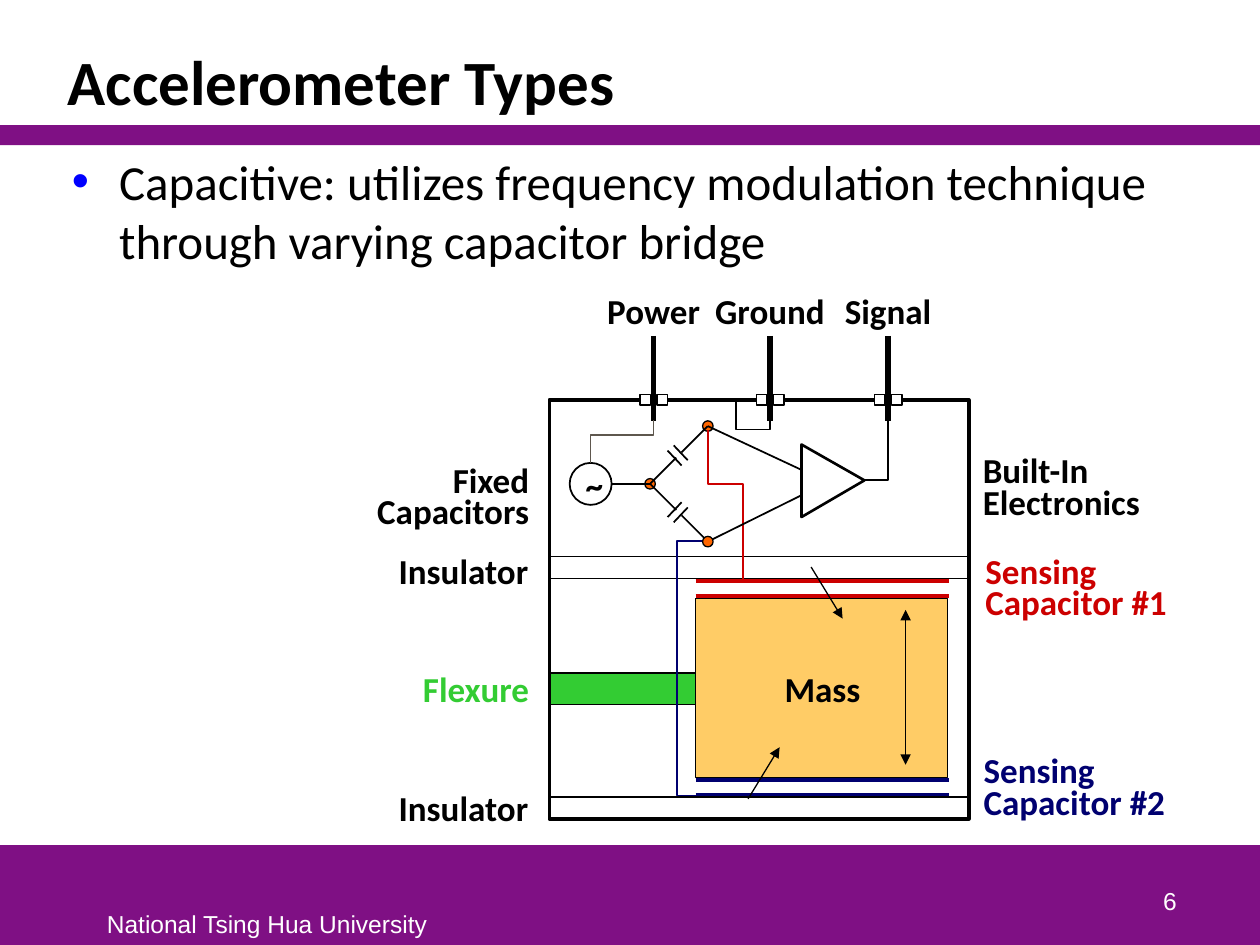
from lxml.etree import SubElement
from pptx import Presentation
from pptx.dml.color import RGBColor
from pptx.enum.shapes import MSO_CONNECTOR, MSO_SHAPE
from pptx.enum.text import MSO_ANCHOR, MSO_AUTO_SIZE, PP_ALIGN
from pptx.oxml.ns import qn
from pptx.util import Pt

BLACK, WHITE, PURPLE = "000000", "FFFFFF", "7F1084"
RED, NAVY, GREEN, ORANGE, SAND = "CC0000", "000070", "33CC33", "FF6600", "FFCC66"

TITLE = "Accelerometer Types"
BULLET = "Capacitive: utilizes frequency modulation technique through varying capacitor bridge"
FOOTER = "National Tsing Hua University"
PAGE_NUMBER = "6"

# Terminal name, x of its lead
TERMINALS = [("Power", 373.5), ("Ground", 440), ("Signal", 507.5)]
LEAD_TOP, LEAD_BOTTOM = 192, 240.5

# Side labels: text, (left, top, width, height), colour
LEFT_LABELS = [
    ("Fixed Capacitors", (178, 264, 131.5, 44.5), BLACK),
    ("Insulator", (177, 316, 132, 25), BLACK),
    ("Flexure", (196, 383.5, 113.5, 25), GREEN),
    ("Insulator", (177, 451.5, 132, 25), BLACK),
]
RIGHT_LABELS = [
    ("Built-In Electronics", (554.5, 258.5, 144, 44), BLACK),
    ("Sensing Capacitor #1", (556, 316, 144, 44.5), RED),
    ("Sensing Capacitor #2", (555, 430, 144, 44), NAVY),
]

HOUSING = (314, 228.5, 239.5, 239.5)
INSULATORS = [(314, 318, 239.5, 12.5), (314, 455.5, 239.5, 12.5)]
FLEXURE = (314, 384.5, 113.5, 18)
MASS = (397.5, 342, 144, 102.5)
OSCILLATOR = (325.5, 264.5, 24, 24)

# Sensing plates: y, colour
PLATES = [(332, RED), (340.5, RED), (445.5, NAVY), (454.5, NAVY)]

# Bridge nodes
INPUT_NODE, TOP_NODE, BOTTOM_NODE = (371.5, 276.5), (404.5, 243.5), (404.5, 309.5)
# Bridge arm, as offsets from the input node; the lower arm is the mirror of the upper one
ARM = [
    ((0, 0), (15, 15)),
    ((18, 18), (33, 33)),
    ((21.5, 13.5), (13.5, 22)),
    ((18, 10.5), (10, 19)),
]

AMPLIFIER = [(458, 254), (494, 274.5), (458, 295.5)]
# Bent wires: points, colour
WIRES = [
    ([(440, 240), (440, 245.5), (420.5, 245.5), (420.5, 228.5)], BLACK),
    ([(373.5, 240), (373.5, 248.5), (337.5, 248.5), (337.5, 264.5)], "5E574E"),
    ([(398, 454.5), (387, 454.5), (387, 309), (404, 309)], NAVY),
    ([(404.5, 246), (404.5, 276.5), (424.5, 276.5), (424.5, 332)], RED),
    ([(507.5, 240.5), (507.5, 274.5), (494.5, 274.5)], BLACK),
]
STRAIGHT_WIRES = [
    ((349.5, 276.5), INPUT_NODE),
    (TOP_NODE, (458, 268.5)),
    (BOTTOM_NODE, (458, 283)),
]


def color(hex_code):
    return RGBColor.from_string(hex_code)


def write(shape, text, font="Calibri", size=20, bold=True, ink=BLACK, align=PP_ALIGN.LEFT,
          spacing=None, anchor=MSO_ANCHOR.TOP, wrap=True, bullet=None):
    frame = shape.text_frame
    frame.word_wrap = wrap
    frame.vertical_anchor = anchor
    frame.auto_size = MSO_AUTO_SIZE.NONE
    paragraph = frame.paragraphs[0]
    paragraph.text = text
    paragraph.alignment = align
    if spacing:
        paragraph.line_spacing = spacing
    if bullet:
        props = paragraph._p.get_or_add_pPr()
        props.set("marL", str(Pt(27)))
        props.set("indent", str(-Pt(27)))
        bullet_color = SubElement(props, qn("a:buClr"))
        SubElement(bullet_color, qn("a:srgbClr")).set("val", bullet)
        SubElement(props, qn("a:buFont")).set("typeface", "Arial")
        SubElement(props, qn("a:buChar")).set("char", "•")
    style = paragraph.runs[0].font
    style.name, style.size, style.bold = font, Pt(size), bold
    style.color.rgb = color(ink)


def add_label(shapes, text, place, **text_format):
    write(shapes.add_textbox(*map(Pt, place)), text, **text_format)


def paint(shape, fill=None, line=BLACK, weight=0.75):
    shape.shadow.inherit = False
    if fill:
        shape.fill.solid()
        shape.fill.fore_color.rgb = color(fill)
    else:
        shape.fill.background()
    if line:
        shape.line.color.rgb = color(line)
        shape.line.width = Pt(weight)
    else:
        shape.line.fill.background()


def add_preset(shapes, kind, place, **look):
    paint(shapes.add_shape(kind, *map(Pt, place)), **look)


def add_node(shapes, center):
    x, y = center
    add_preset(shapes, MSO_SHAPE.OVAL, (x - 3, y - 3, 6, 6), fill=ORANGE)


def add_path(shapes, points, ink=BLACK, weight=1, close=False):
    start, *rest = [(Pt(x), Pt(y)) for x, y in points]
    builder = shapes.build_freeform(*start)
    builder.add_line_segments(rest, close=close)
    paint(builder.convert_to_shape(), line=ink, weight=weight)


def add_line(shapes, start, end, ink=BLACK, weight=1, arrows=()):
    """Arrows holds headEnd, tailEnd or both."""
    line = shapes.add_connector(MSO_CONNECTOR.STRAIGHT, *map(Pt, (*start, *end)))
    line.line.color.rgb = color(ink)
    line.line.width = Pt(weight)
    for arrow in arrows:
        SubElement(line.line._get_or_add_ln(), qn(f"a:{arrow}")).set("type", "triangle")
    SubElement(line._element.spPr, qn("a:effectLst"))


def add_frame(slide):
    shapes = slide.shapes
    for top, height in ((483, 57), (71.5, 11.5)):
        add_preset(shapes, MSO_SHAPE.RECTANGLE, (0, top, 720, height), fill=PURPLE, line=None)
    title = shapes.title
    title.left, title.top, title.width, title.height = map(Pt, (31.5, 18, 646, 53.5))
    write(title, TITLE, size=36, spacing=0.85, anchor=MSO_ANCHOR.BOTTOM)
    add_label(shapes, BULLET, (34, 83, 643.5, 391), size=28, bold=False, bullet="0000FF")
    small = dict(font="Arial", size=14, bold=False, ink=WHITE)
    add_label(shapes, FOOTER, (54, 516, 199, 24), wrap=False, **small)
    add_label(shapes, PAGE_NUMBER, (530, 490.5, 149.5, 36), align=PP_ALIGN.RIGHT,
              anchor=MSO_ANCHOR.BOTTOM, **small)


def add_sensor(shapes):
    add_preset(shapes, MSO_SHAPE.RECTANGLE, FLEXURE, fill=GREEN)
    add_preset(shapes, MSO_SHAPE.RECTANGLE, MASS, fill=SAND)
    add_label(shapes, "Mass", (440, 378, 60, 31.5), align=PP_ALIGN.CENTER)
    for y, ink in PLATES:
        add_line(shapes, (397.5, y), (542.5, y), ink, 2.25)
    for place in INSULATORS:
        add_preset(shapes, MSO_SHAPE.RECTANGLE, place, fill=WHITE)
    add_preset(shapes, MSO_SHAPE.RECTANGLE, HOUSING, weight=2.25)
    add_line(shapes, (463.5, 324), (481.5, 353.5), weight=0.75, arrows=["tailEnd"])
    add_line(shapes, (427.5, 456.5), (445.5, 427), weight=0.75, arrows=["tailEnd"])
    add_line(shapes, (517.5, 348.5), (517.5, 437), arrows=["headEnd", "tailEnd"])


def add_electronics(shapes):
    for name, x in TERMINALS:
        add_line(shapes, (x, LEAD_TOP), (x, LEAD_BOTTOM), weight=3)
        add_label(shapes, name, (x - 42, 162, 84, 31.5), align=PP_ALIGN.CENTER)
        for offset in (-7.7, 2):
            add_preset(shapes, MSO_SHAPE.RECTANGLE, (x + offset, 225.5, 6, 6), fill=WHITE)
    add_preset(shapes, MSO_SHAPE.OVAL, OSCILLATOR, weight=1)
    add_label(shapes, "~", (327.5, 267, 18, 25), spacing=0.75)
    for node in (INPUT_NODE, TOP_NODE):
        add_node(shapes, node)
    for side in (1, -1):
        arm = shapes.add_group_shape().shapes
        for ends in ARM:
            start, end = [(INPUT_NODE[0] + x, INPUT_NODE[1] + side * y) for x, y in ends]
            add_line(arm, start, end)
    add_path(shapes, AMPLIFIER, weight=1.5, close=True)
    for points, ink in WIRES:
        add_path(shapes, points, ink)
    for start, end in STRAIGHT_WIRES:
        add_line(shapes, start, end)
    add_node(shapes, BOTTOM_NODE)


def main():
    deck = Presentation()
    deck.slide_width, deck.slide_height = Pt(720), Pt(540)
    slide = deck.slides.add_slide(deck.slide_layouts[5])
    add_frame(slide)
    add_sensor(slide.shapes)
    add_electronics(slide.shapes)
    for labels, align in ((LEFT_LABELS, PP_ALIGN.RIGHT), (RIGHT_LABELS, PP_ALIGN.LEFT)):
        for text, place, ink in labels:
            add_label(slide.shapes, text, place, ink=ink, align=align, spacing=0.75)
    deck.save("out.pptx")


if __name__ == "__main__":
    main()
